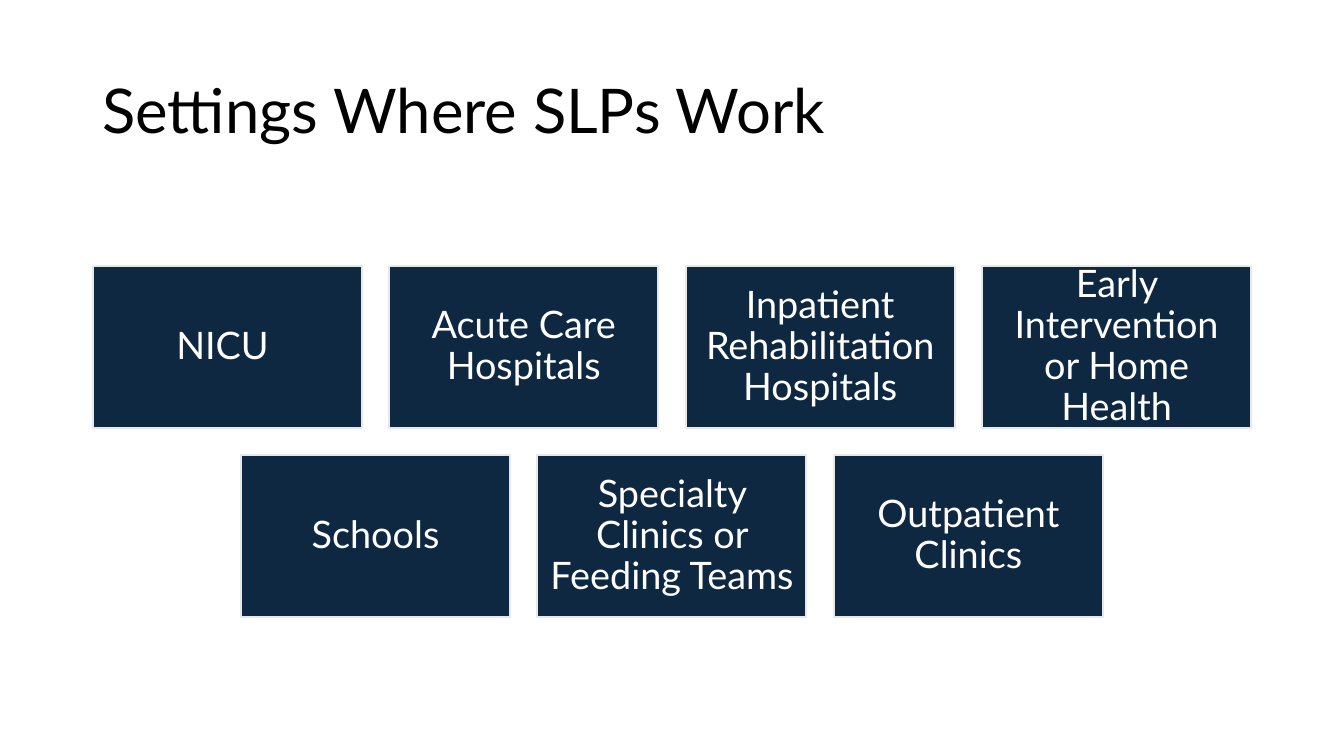
from pptx import Presentation
from pptx import util as u
from pptx.dml.color import RGBColor
from pptx.enum import shapes, text

SLIDE_WIDTH, SLIDE_HEIGHT = 33.87, 19.05
CARD_WIDTH, CARD_HEIGHT, CARD_GAP = 6.78, 4.07, 0.69
FIRST_ROW_TOP = 6.71
SETTING_ROWS = [
    ["NICU ", "Acute Care Hospitals", "Inpatient Rehabilitation Hospitals",
     "Early Intervention or Home Health"],
    ["Schools", "Specialty Clinics or Feeding Teams", "Outpatient Clinics"],
]


def color(value):
    return RGBColor.from_string(value)


def apply(target, values):
    """Set each named attribute of the target."""
    for name, value in values.items():
        setattr(target, name, value)


class SlideBuilder:
    font = "Lato"
    navy, pale, white, black = "0E2841", "E8E8E8", "FFFFFF", "000000"

    def __init__(self, page):
        self.page = page

    def add_words(self, shape, words, size, ink, align, inset_x, inset_y):
        frame = shape.text_frame
        apply(frame, {
            "word_wrap": True,
            "auto_size": text.MSO_AUTO_SIZE.NONE,
            "vertical_anchor": text.MSO_ANCHOR.MIDDLE,
            "margin_left": u.Cm(inset_x), "margin_right": u.Cm(inset_x),
            "margin_top": u.Cm(inset_y), "margin_bottom": u.Cm(inset_y),
        })
        para = frame.paragraphs[0]
        apply(para, {"alignment": align, "line_spacing": 0.9})
        span = para.add_run()
        span.text = words
        apply(span.font, {"name": self.font, "size": u.Pt(size)})
        span.font.color.rgb = color(ink)

    def title(self, words, *bounds):
        box = self.page.shapes.add_textbox(*map(u.Cm, bounds))
        self.add_words(box, words, 44, self.black, text.PP_ALIGN.LEFT, 0.25, 0.13)

    def card(self, words, *bounds):
        box = self.page.shapes.add_shape(
            shapes.MSO_SHAPE.RECTANGLE, *map(u.Cm, bounds))
        box.shadow.inherit = False
        box.fill.solid()
        box.fill.fore_color.rgb = color(self.navy)
        box.line.color.rgb = color(self.pale)
        box.line.width = u.Pt(1.5)
        self.add_words(box, words, 27, self.white, text.PP_ALIGN.CENTER, 0.28, 0.28)

    def card_row(self, labels, top):
        """Place equally spaced cards, centred across the slide."""
        step = CARD_WIDTH + CARD_GAP
        left = (SLIDE_WIDTH - len(labels) * step + CARD_GAP) / 2
        for column, label in enumerate(labels):
            self.card(label, left + column * step, top, CARD_WIDTH, CARD_HEIGHT)


def main():
    deck = Presentation()
    apply(deck, {"slide_width": u.Cm(SLIDE_WIDTH),
                 "slide_height": u.Cm(SLIDE_HEIGHT)})
    builder = SlideBuilder(deck.slides.add_slide(deck.slide_layouts[6]))
    builder.title("Settings Where SLPs Work", 2.33, 1.01, 29.21, 3.68)
    for row, labels in enumerate(SETTING_ROWS):
        builder.card_row(labels, FIRST_ROW_TOP + row * (CARD_HEIGHT + CARD_GAP))
    deck.save("out.pptx")


if __name__ == "__main__":
    main()
